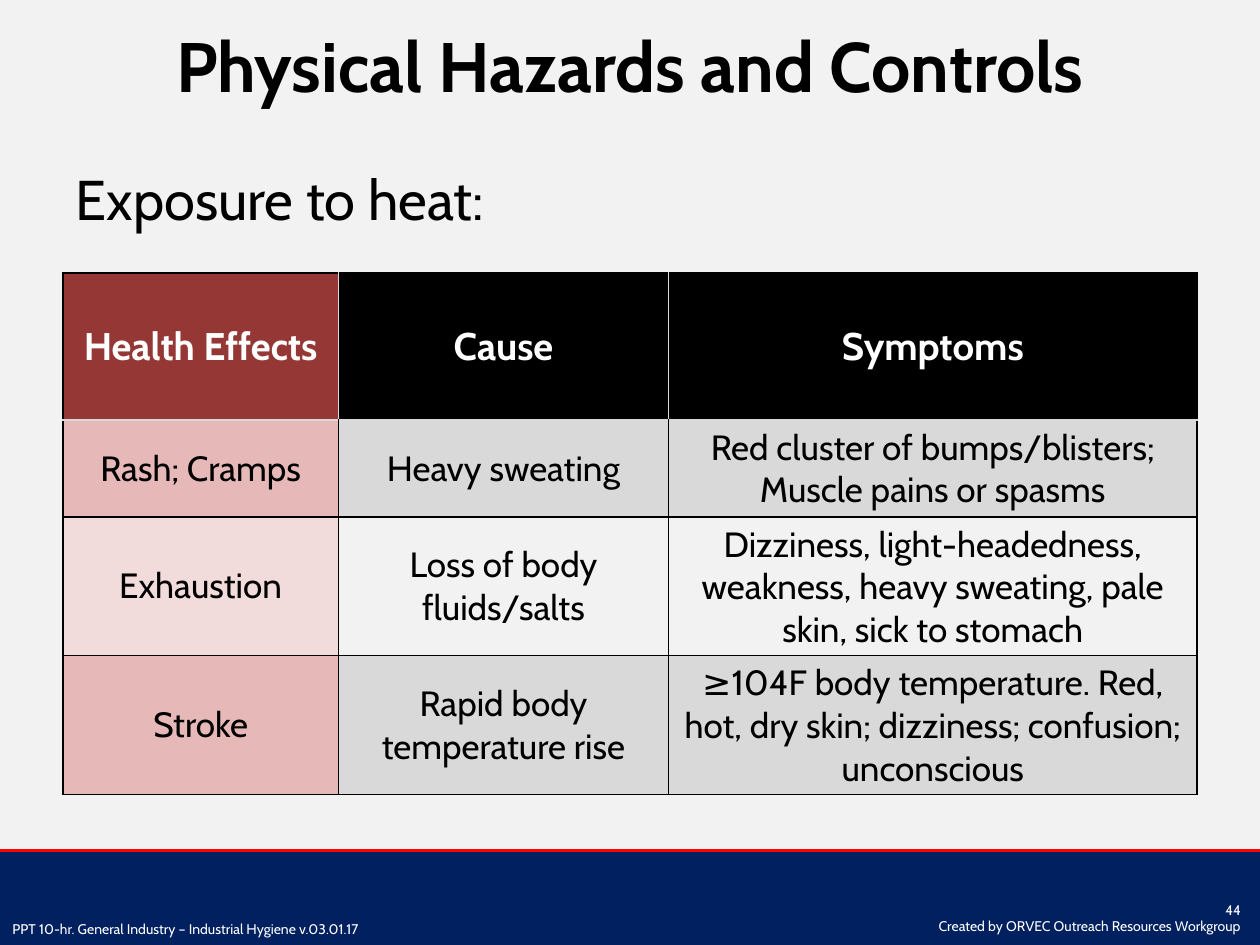
from lxml import etree
from pptx import Presentation
from pptx.dml.color import RGBColor
from pptx.enum.shapes import MSO_CONNECTOR, MSO_SHAPE
from pptx.enum.text import MSO_ANCHOR, MSO_AUTO_SIZE, PP_ALIGN
from pptx.oxml.ns import qn
from pptx.util import Cm, Pt

LEFT, CENTER, RIGHT = PP_ALIGN.LEFT, PP_ALIGN.CENTER, PP_ALIGN.RIGHT
TOP, MIDDLE = MSO_ANCHOR.TOP, MSO_ANCHOR.MIDDLE
RECT, STRAIGHT = MSO_SHAPE.RECTANGLE, MSO_CONNECTOR.STRAIGHT
NO_FIT = MSO_AUTO_SIZE.NONE

FONT = "Cabin"
BLACK = RGBColor(0, 0, 0)
WHITE = RGBColor(255, 255, 255)
PAPER = RGBColor(0xF2, 0xF2, 0xF2)
GRAY = RGBColor(0xD9, 0xD9, 0xD9)
NAVY = RGBColor(0x00, 0x20, 0x60)
RED = RGBColor(0xFF, 0, 0)
MAROON = RGBColor(0x95, 0x37, 0x35)
ROSE = RGBColor(0xE6, 0xB9, 0xB8)
BLUSH = RGBColor(0xF2, 0xDC, 0xDB)

WIDTH, HEIGHT = Cm(25.4), Cm(19.05)
BAND_TOP = Cm(17.15)

COLS = [5.55, 6.66, 10.65]
ROWS = [2.97, 1.95, 2.8, 2.8]
CELLS = [
    ["Health Effects", "Cause", "Symptoms"],
    ["Rash; Cramps", "Heavy sweating",
     "Red cluster of bumps/blisters; Muscle pains or spasms"],
    ["Exhaustion", "Loss of body fluids/salts",
     "Dizziness, light-headedness, weakness, heavy sweating, pale skin, "
     "sick to stomach"],
    ["Stroke", "Rapid body temperature rise",
     "≥104F body temperature. Red, hot, dry skin; dizziness; confusion; "
     "unconscious"],
]


def write(frame, lines, size, color=BLACK, bold=False, align=LEFT, anchor=TOP):
    """Fill a text frame with uniformly styled paragraphs."""
    frame.word_wrap = True
    frame.vertical_anchor = anchor
    frame.text = "\n".join(lines)
    for para in frame.paragraphs:
        para.alignment = align
        font = para.font
        font.name, font.size, font.bold = FONT, Pt(size), bold
        font.color.rgb = color


def place(shape, left, top, width, height):
    shape.left, shape.top = Cm(left), Cm(top)
    shape.width, shape.height = Cm(width), Cm(height)
    shape.text_frame.auto_size = NO_FIT


def add_note(slide, box, lines, **style):
    note = slide.shapes.add_textbox(*map(Cm, box))
    write(note.text_frame, lines, 8, WHITE, **style)


def add_band(slide):
    """Navy footer band with a red rule along its top."""
    band = slide.shapes.add_shape(RECT, 0, BAND_TOP, WIDTH, HEIGHT - BAND_TOP)
    band.shadow.inherit = False
    band.fill.solid()
    band.fill.fore_color.rgb = NAVY
    band.line.fill.background()
    rule = slide.shapes.add_connector(STRAIGHT, 0, BAND_TOP, WIDTH, BAND_TOP)
    rule.line.color.rgb = RED
    rule.line.width = Pt(2)
    etree.SubElement(rule._element.spPr, qn("a:effectLst"))


def set_edge(cell, side, color):
    props = cell._tc.get_or_add_tcPr()
    line = etree.SubElement(props, qn("a:ln" + side), w=str(Pt(1)))
    fill = etree.SubElement(line, qn("a:solidFill"))
    etree.SubElement(fill, qn("a:srgbClr"), val=str(color))


def edge_color(row, col, side):
    """Gray edges inside and under the header, black elsewhere."""
    inner = {"L": col > 0, "R": col < len(COLS) - 1, "T": False, "B": True}
    if row == 0:
        return GRAY if inner[side] else BLACK
    return GRAY if row == 1 and side == "T" else BLACK


def cell_fill(row, col):
    if row == 0:
        return BLACK if col else MAROON
    if row % 2:
        return GRAY if col else ROSE
    return PAPER if col else BLUSH


def add_grid(slide):
    frame = slide.shapes.add_table(len(ROWS), len(COLS), Cm(1.27), Cm(5.5),
                                   Cm(sum(COLS)), Cm(sum(ROWS)))
    table = frame.table
    for col, width in zip(table.columns, COLS):
        col.width = Cm(width)
    for row, height in zip(table.rows, ROWS):
        row.height = Cm(height)
    for r, texts in enumerate(CELLS):
        for c, text in enumerate(texts):
            cell = table.cell(r, c)
            head = r == 0
            write(cell.text_frame, [text], 22 if head else 20,
                  WHITE if head else BLACK, head, CENTER)
            cell.vertical_anchor = MIDDLE
            for side in "LRTB":
                set_edge(cell, side, edge_color(r, c, side))
            cell.fill.solid()
            cell.fill.fore_color.rgb = cell_fill(r, c)


def add_heads(slide):
    """Title and the unbulleted lead line."""
    title, body = slide.shapes.title, slide.placeholders[1]
    place(title, 1.27, 0.33, 22.86, 3.18)
    write(title.text_frame, ["Physical Hazards and Controls"], 40,
          bold=True, align=CENTER)
    place(body, 1.27, 3.18, 20.32, 2)
    write(body.text_frame, ["Exposure to heat:"], 32)
    props = body.text_frame.paragraphs[0]._p.get_or_add_pPr()
    props.set("marL", "0")
    props.set("indent", "0")
    props.insert_element_before(etree.Element(qn("a:buNone")), "a:defRPr")


def main():
    deck = Presentation()
    deck.slide_width, deck.slide_height = WIDTH, HEIGHT
    slide = deck.slides.add_slide(deck.slide_layouts[1])
    back = slide.background.fill
    back.solid()
    back.fore_color.rgb = PAPER

    # Footer
    add_band(slide)
    add_note(slide, (0, 18.44, 8.05, 0.61),
             ["PPT 10-hr. General Industry – Industrial Hygiene v.03.01.17"])
    add_note(slide, (17.45, 17.91, 7.82, 1.19),
             ["44", "Created by ORVEC Outreach Resources Workgroup"],
             align=RIGHT, anchor=MIDDLE)

    # Content
    add_grid(slide)
    add_heads(slide)
    deck.save("out.pptx")


if __name__ == "__main__":
    main()
